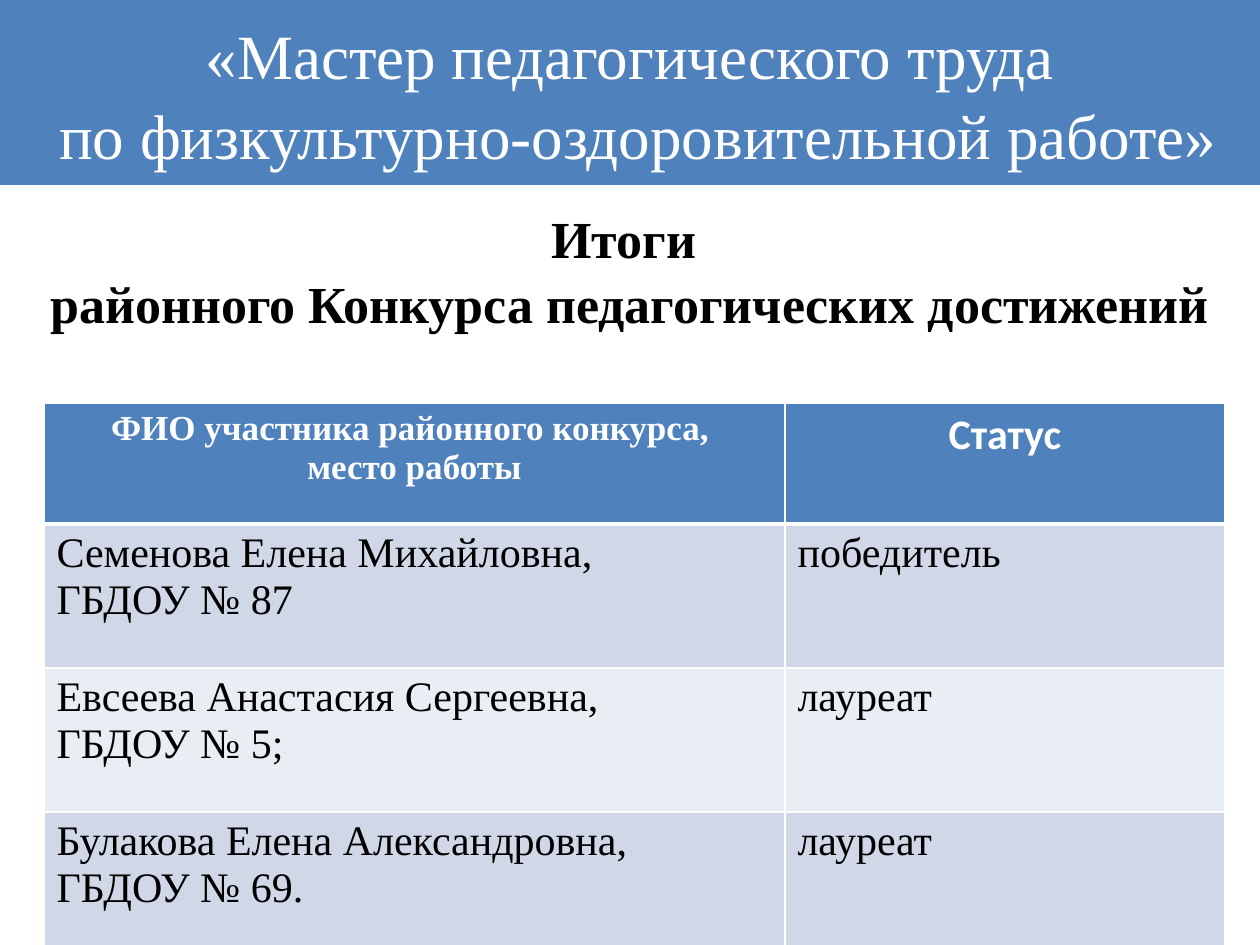
from lxml import etree
from pptx import Presentation
from pptx.dml.color import RGBColor
from pptx.enum.shapes import MSO_SHAPE
from pptx.enum.text import MSO_ANCHOR, PP_ALIGN
from pptx.oxml.ns import qn
from pptx.util import Emu, Pt

PX = 914400 // 126
RECTANGLE = MSO_SHAPE.RECTANGLE
TOP, MIDDLE = MSO_ANCHOR.TOP, MSO_ANCHOR.MIDDLE
LEFT, CENTER = PP_ALIGN.LEFT, PP_ALIGN.CENTER
SERIF, SANS = "Times New Roman", "Calibri"
COLORS = {
    "blue": "4F81BD",
    "band_dark": "D0D8E8",
    "band_light": "E9EDF4",
    "white": "FFFFFF",
    "black": "000000",
}
HEADERS = ["ФИО участника районного конкурса, \nместо работы", "Статус"]
PARTICIPANTS = [
    ["Семенова Елена Михайловна,\nГБДОУ № 87", "победитель"],
    ["Евсеева Анастасия Сергеевна,\nГБДОУ № 5;", "лауреат"],
    ["Булакова Елена Александровна,\nГБДОУ № 69.", "лауреат"],
]
COLUMN_WIDTHS = [741, 440]
ROW_HEIGHTS = [121, 144, 144, 136]


def px(*values):
    return [Emu(value * PX) for value in values]


def color(name):
    return RGBColor.from_string(COLORS[name])


def write(frame, text, size, ink, font=SERIF, bold=False, align=CENTER, spacing=None):
    frame.text = text
    for para in frame.paragraphs:
        para.alignment = align
        para.line_spacing = spacing
        for span in para.runs:
            span.font.size = Pt(size)
            span.font.name = font
            span.font.bold = bold
            span.font.color.rgb = color(ink)


def add_banner(page, text):
    banner = page.shapes.add_shape(RECTANGLE, *px(0, 0, 1260, 185))
    banner.shadow.inherit = False
    banner.fill.solid()
    banner.fill.fore_color.rgb = color("blue")
    banner.line.fill.background()
    banner.text_frame.vertical_anchor = MIDDLE
    banner.text_frame.word_wrap = True
    write(banner.text_frame, text, 36, "white", spacing=1.05)


def add_heading(page, text):
    box = page.shapes.add_textbox(*px(25, 204, 1211, 126))
    frame = box.text_frame
    frame.word_wrap = True
    frame.margin_top = frame.margin_bottom = 0
    frame.vertical_anchor = TOP
    write(frame, text, 29.7, "black", bold=True, spacing=1.04)


def set_border(cell, side, width):
    line = etree.Element(qn(f"a:{side}"), w=str(Pt(width)))
    fill = etree.SubElement(line, qn("a:solidFill"))
    etree.SubElement(fill, qn("a:srgbClr"), val=COLORS["white"])
    return line


def style_cell(cell, fill, bottom):
    cell.fill.solid()
    cell.fill.fore_color.rgb = color(fill)
    properties = cell._tc.get_or_add_tcPr()
    widths = {"lnL": 1, "lnR": 1, "lnT": 1, "lnB": bottom}
    for index, (side, width) in enumerate(widths.items()):
        properties.insert(index, set_border(cell, side, width))


def add_results(page):
    rows = [HEADERS] + PARTICIPANTS
    area = px(44, 403, sum(COLUMN_WIDTHS), sum(ROW_HEIGHTS))
    table = page.shapes.add_table(len(rows), len(HEADERS), *area).table
    for column, width in zip(table.columns, px(*COLUMN_WIDTHS)):
        column.width = width
    for row, height in zip(table.rows, px(*ROW_HEIGHTS)):
        row.height = height
    for row_index, texts in enumerate(rows):
        for column_index, text in enumerate(texts):
            cell = table.cell(row_index, column_index)
            if row_index == 0:
                size, font = [(20, SERIF), (24, SANS)][column_index]
                write(cell.text_frame, text, size, "white", font, bold=True)
                style_cell(cell, "blue", 3)
            else:
                write(cell.text_frame, text, 24, "black", align=LEFT)
                style_cell(cell, "band_dark" if row_index % 2 else "band_light", 1)
            if row_index == 1:
                style_top = cell._tc.tcPr.find(qn("a:lnT"))
                style_top.set("w", str(Pt(3)))


def main():
    deck = Presentation()
    deck.slide_width, deck.slide_height = px(1260, 945)
    page = deck.slides.add_slide(deck.slide_layouts[6])
    add_heading(page, "Итоги \nрайонного Конкурса педагогических достижений")
    add_banner(page, "«Мастер педагогического труда\n по физкультурно-оздоровительной работе»")
    add_results(page)
    deck.save("out.pptx")


if __name__ == "__main__":
    main()
